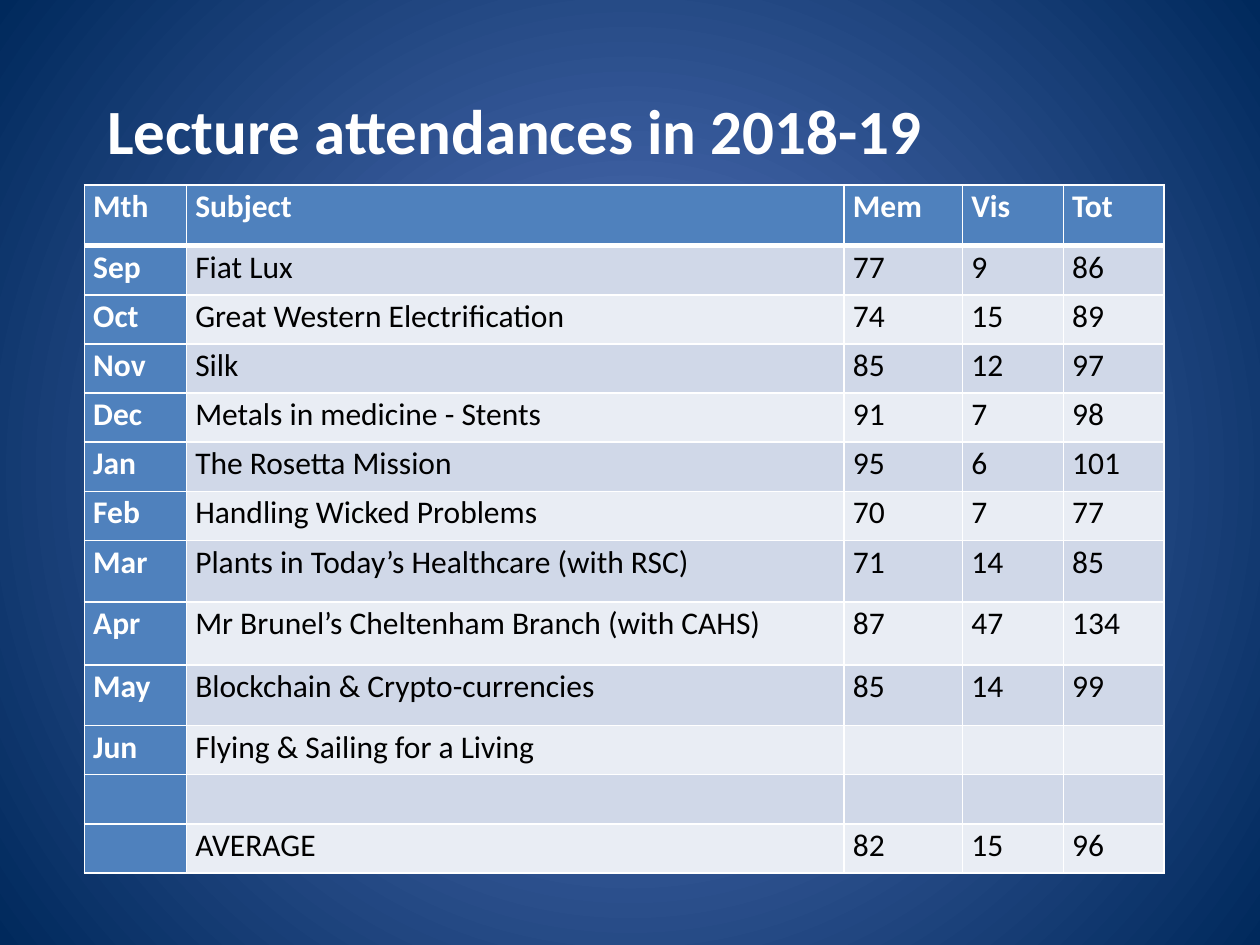
import pptx
import pptx.dml.color
import pptx.enum.text
import pptx.oxml
import pptx.oxml.ns
import pptx.util

Inches, Pt = pptx.util.Inches, pptx.util.Pt
HUES = {"white": "FFFFFF", "black": "000000", "head": "4F81BD",
        "odd": "D0D8E8", "even": "E9EDF4", "glow": "5E7CC5", "navy": "00295C"}
FONT = "Calibri"

HEAD = ("Mth", "Subject", "Mem", "Vis", "Tot")
# Month, subject, members, visitors, total, row height
TALKS = [
    ("Sep", "Fiat Lux", "77", "9", "86", 0.39),
    ("Oct", "Great Western Electrification", "74", "15", "89", 0.39),
    ("Nov", "Silk", "85", "12", "97", 0.39),
    ("Dec", "Metals in medicine - Stents", "91", "7", "98", 0.39),
    ("Jan", "The Rosetta Mission", "95", "6", "101", 0.39),
    ("Feb", "Handling Wicked Problems", "70", "7", "77", 0.39),
    ("Mar", "Plants in Today’s Healthcare (with RSC)", "71", "14", "85", 0.49),
    ("Apr", "Mr Brunel’s Cheltenham Branch (with CAHS)", "87", "47", "134", 0.5),
    ("May", "Blockchain & Crypto-currencies", "85", "14", "99", 0.48),
    ("Jun", "Flying & Sailing for a Living", "", "", "", 0.39),
    ("", "", "", "", "", 0.39),
    ("", "AVERAGE", "82", "15", "96", 0.39),
]
ROWS = [HEAD + (0.48,)] + TALKS
COLS = [0.81, 5.22, 0.94, 0.8, 0.8]


def color(name):
    return pptx.dml.color.RGBColor.from_string(HUES[name])


class Deck:
    def __init__(self):
        self.prs = pptx.Presentation()
        self.prs.slide_width, self.prs.slide_height = Inches(10), Inches(7.5)
        self.slide = self.prs.slides.add_slide(self.prs.slide_layouts[0])
        # The title layout also brings a subtitle, which is not needed
        sub = self.slide.placeholders[1].element
        sub.getparent().remove(sub)

    def style(self, para, size, hue, bold):
        for run in para.runs:
            font = run.font
            font.name, font.size, font.bold = FONT, Pt(size), bold
            font.color.rgb = color(hue)

    def back(self, inner, outer):
        fill = self.slide.background.fill
        fill.gradient()
        for stop, hue, pos in zip(fill.gradient_stops, (inner, outer), (0, 1)):
            stop.color.rgb = color(hue)
            stop.position = pos
        # Turn the linear gradient into a circular one
        lin = next(self.slide.element.iter(pptx.oxml.ns.qn("a:lin")))
        lin.getparent().replace(lin, pptx.oxml.parse_xml(
            f'<a:path {pptx.oxml.ns.nsdecls("a")} path="circle">'
            '<a:fillToRect l="50000" t="50000" r="50000" b="50000"/></a:path>'))

    def title(self, text, left, top, width, height):
        box = self.slide.shapes.title
        box.left, box.top = Inches(left), Inches(top)
        box.width, box.height = Inches(width), Inches(height)
        frame = box.text_frame
        frame.text = text
        frame.vertical_anchor = pptx.enum.text.MSO_ANCHOR.MIDDLE
        frame.paragraphs[0].alignment = pptx.enum.text.PP_ALIGN.LEFT
        self.style(frame.paragraphs[0], 36, "white", True)

    def edges(self, cell, top, base):
        props = cell._tc.get_or_add_tcPr()
        sides = zip(("lnL", "lnR", "lnT", "lnB"), (1, 1, top, base))
        for spot, (side, width) in enumerate(sides):
            props.insert(spot, pptx.oxml.parse_xml(
                f'<a:{side} {pptx.oxml.ns.nsdecls("a")} w="{Pt(width)}">'
                f'<a:solidFill><a:srgbClr val="{HUES["white"]}"/></a:solidFill>'
                f'</a:{side}>'))

    def cell(self, cell, text, row, col):
        label = row == 0 or col == 0
        cell.margin_left = cell.margin_right = Inches(0.07)
        cell.margin_top = cell.margin_bottom = 0
        cell.fill.solid()
        cell.fill.fore_color.rgb = color(
            "head" if label else "odd" if row % 2 else "even")
        cell.text_frame.text = text
        para = cell.text_frame.paragraphs[0]
        para.line_spacing = 1.07
        self.style(para, 18, "white" if label else "black", label)
        # A thick rule parts the header from the body
        self.edges(cell, 3 if row == 1 else 1, 3 if row == 0 else 1)

    def table(self, rows, cols, left, top):
        high = sum(row[-1] for row in rows)
        grid = self.slide.shapes.add_table(
            len(rows), len(cols), Inches(left), Inches(top),
            Inches(sum(cols)), Inches(high)).table
        for col, width in zip(grid.columns, cols):
            col.width = Inches(width)
        for r, (*texts, height) in enumerate(rows):
            grid.rows[r].height = Inches(height)
            for c, text in enumerate(texts):
                self.cell(grid.cell(r, c), text, r, c)


def main():
    deck = Deck()
    deck.back("glow", "navy")
    deck.title("Lecture attendances in 2018-19", 0.75, 0.36, 8.5, 1.34)
    deck.table(ROWS, COLS, 0.67, 1.47)
    deck.prs.save("out.pptx")


if __name__ == "__main__":
    main()
